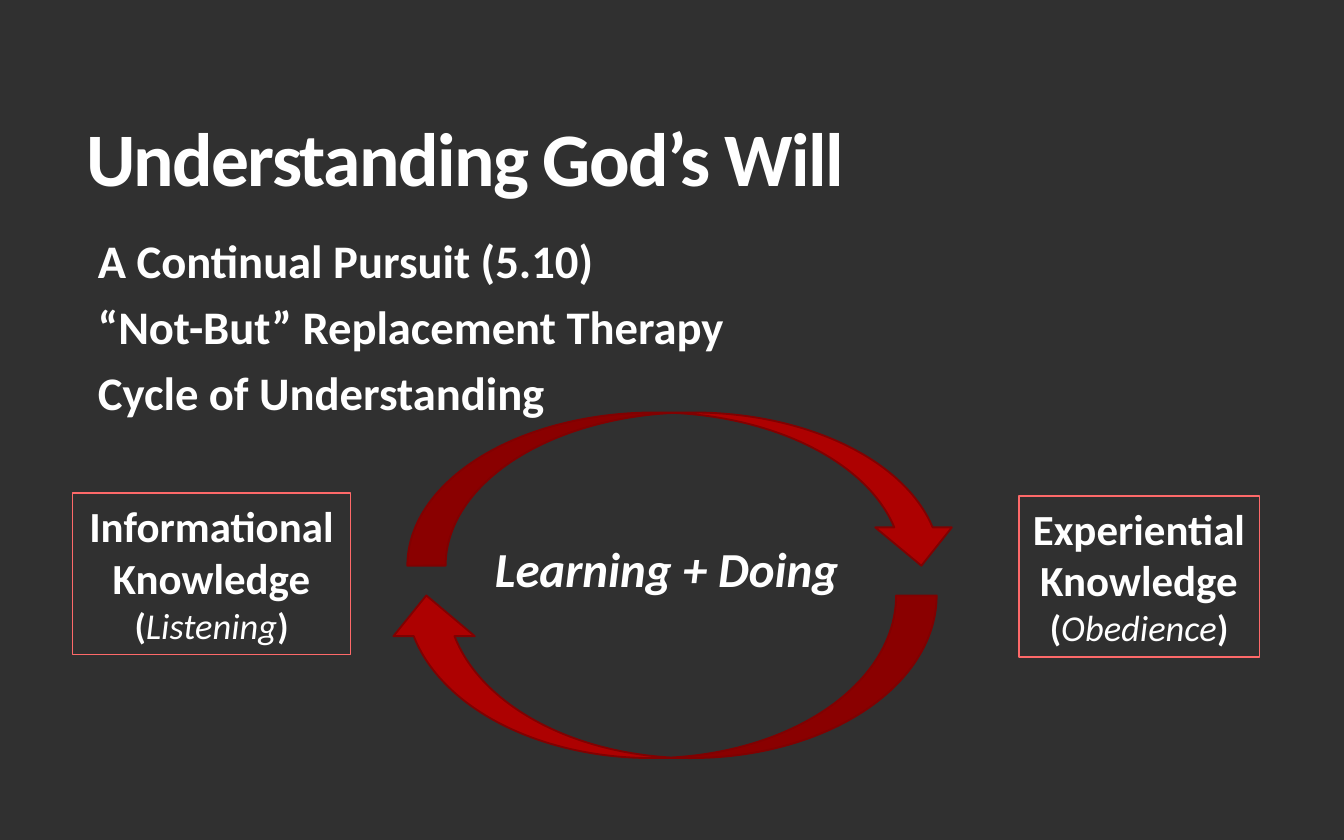
from dataclasses import dataclass

import pptx
import pptx.util
import pptx.dml.color
import pptx.enum.shapes
import pptx.enum.text
import pptx.oxml
import pptx.oxml.ns

Pt = pptx.util.Pt
SHAPE = pptx.enum.shapes.MSO_SHAPE
ALIGN = pptx.enum.text.PP_ALIGN
ANCHOR = pptx.enum.text.MSO_ANCHOR
AUTO = pptx.enum.text.MSO_AUTO_SIZE

COLORS = {"background": "303030", "text": "FFFFFF", "arrow": "AD0101",
          "arrow_line": "800101", "box_line": "FE6969"}
TEXT = {"name": "Calibri", "bold": True, "italic": False}


@dataclass
class Area:
    left: float
    top: float
    width: float
    height: float

    def lengths(self) -> list:
        return [Pt(v) for v in (self.left, self.top, self.width, self.height)]


@dataclass
class CycleArrow:
    area: Area
    rotation: float


@dataclass
class KnowledgeBox:
    area: Area
    lines: list[str]
    practice: str


def color(name: str):
    return pptx.dml.color.RGBColor.from_string(COLORS[name])


def add_run(p, text: str, size: float, **changes):
    r = p.add_run()
    r.text = text
    for key, value in {**TEXT, "size": Pt(size), **changes}.items():
        setattr(r.font, key, value)
    r.font.color.rgb = color("text")
    return r


def paragraph(tf, index: int):
    return tf.add_paragraph() if index else tf.paragraphs[0]


def place(sp, area: Area):
    sp.left, sp.top, sp.width, sp.height = area.lengths()


def fill_title(sp, text: str, area: Area):
    place(sp, area)
    tf = sp.text_frame
    tf.auto_size = AUTO.NONE
    tf.vertical_anchor = ANCHOR.MIDDLE
    p = tf.paragraphs[0]
    p.alignment = ALIGN.LEFT
    p.line_spacing = 0.85
    r = add_run(p, text, 40.5)
    r.font._element.set("spc", "-90")


def fill_body(sp, items: list[str], area: Area):
    place(sp, area)
    tf = sp.text_frame
    tf.auto_size = AUTO.NONE
    for i, item in enumerate(items):
        p = paragraph(tf, i)
        p.line_spacing = 0.85
        p.space_before = Pt(9.8 if i else 0)
        pPr = p._p.get_or_add_pPr()
        pPr.set("marL", str(Pt(5)))
        pPr.set("indent", "0")
        pPr.append(pptx.oxml.parse_xml(
            f'<a:buNone {pptx.oxml.ns.nsdecls("a")}/>'))
        add_run(p, item, 25)


def add_arrow(s, arrow: CycleArrow):
    sp = s.shapes.add_shape(SHAPE.CURVED_DOWN_ARROW, *arrow.area.lengths())
    sp.rotation = arrow.rotation
    sp.shadow.inherit = False
    sp.fill.solid()
    sp.fill.fore_color.rgb = color("arrow")
    sp.line.color.rgb = color("arrow_line")
    sp.line.width = Pt(1)


def add_box(s, box: KnowledgeBox):
    sp = s.shapes.add_shape(SHAPE.RECTANGLE, *box.area.lengths())
    sp.shadow.inherit = False
    sp.fill.background()
    sp.line.color.rgb = color("box_line")
    sp.line.width = Pt(0.75)
    tf = sp.text_frame
    tf.word_wrap = True
    tf.auto_size = AUTO.SHAPE_TO_FIT_TEXT
    tf.vertical_anchor = ANCHOR.TOP
    for i, line in enumerate(box.lines):
        add_run(paragraph(tf, i), line, 23)
    p = tf.add_paragraph()
    add_run(p, "(", 19.5)
    add_run(p, box.practice, 19.5, bold=False, italic=True)
    add_run(p, ")", 19.5)
    for p in tf.paragraphs:
        p.alignment = ALIGN.CENTER


def add_caption(s, text: str, area: Area):
    tf = s.shapes.add_textbox(*area.lengths()).text_frame
    tf.word_wrap = True
    tf.auto_size = AUTO.SHAPE_TO_FIT_TEXT
    p = tf.paragraphs[0]
    p.alignment = ALIGN.CENTER
    add_run(p, text, 26.2, italic=True)


ARROWS = [
    CycleArrow(Area(218.2, 221, 295.9, 82.1), 0),
    CycleArrow(Area(206.6, 319, 295.2, 87.1), 180),
]
BOXES = [
    KnowledgeBox(Area(38.9, 264.2, 149, 86.4),
                 ["Informational Knowledge"], "Listening"),
    KnowledgeBox(Area(545.8, 265.7, 128.9, 86.4),
                 ["Experiential", "Knowledge"], "Obedience"),
]


def main():
    prs = pptx.Presentation()
    prs.slide_width, prs.slide_height = Pt(720), Pt(450)
    s = prs.slides.add_slide(prs.slide_layouts[1])
    s.background.fill.solid()
    s.background.fill.fore_color.rgb = color("background")
    fill_title(s.shapes.title, "Understanding God’s Will",
               Area(38.9, 33.1, 636.5, 108.7))
    fill_body(s.placeholders[1],
              ["A Continual Pursuit (5.10)",
               "“Not-But” Replacement Therapy",
               "Cycle of Understanding"],
              Area(40.3, 125.3, 635, 253.4))
    for arrow in ARROWS:
        add_arrow(s, arrow)
    for box in BOXES:
        add_box(s, box)
    add_caption(s, "Learning + Doing", Area(256.3, 285.1, 201.6, 38.9))
    prs.save("out.pptx")


if __name__ == "__main__":
    main()
